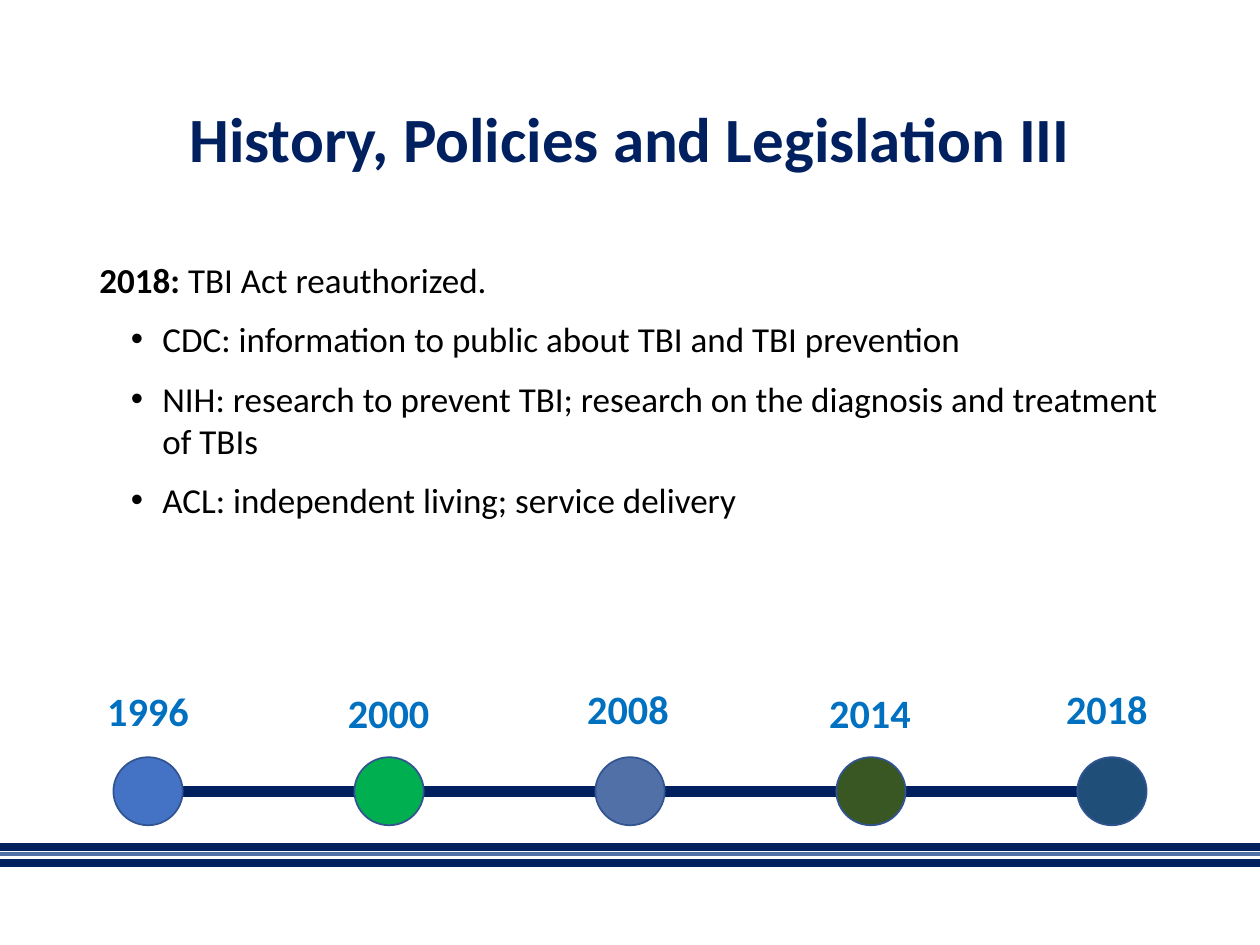
from lxml import etree
from pptx import Presentation
from pptx import util as u
from pptx.dml.color import RGBColor
from pptx.enum import shapes, text
from pptx.oxml import ns

COLORS = {
    "rule": "001F5F",
    "slate": "5070A7",
    "navy": "002060",
    "black": "000000",
    "year": "0070C0",
    "outline": "325491",
    "blue": "4472C4",
    "green": "00B050",
    "olive": "385723",
    "teal": "1F4E79",
}

TITLE = {"size": u.Pt(36), "bold": True}
BODY = {"size": u.Pt(20)}
YEAR = {"size": u.Pt(23), "bold": True}

# Footer rules: height on the page, colour, width in points
FOOTER = [(6.72, "rule", 4.5), (6.78, "slate", 2.25), (6.85, "rule", 4.5)]

BULLETS = [
    "CDC: information to public about TBI and TBI prevention",
    "NIH: research to prevent TBI; research on the diagnosis and treatment of TBIs",
    "ACL: independent living; service delivery",
]

# Year, dot colour, left and top of the label
MILESTONES = [
    ("1996", "blue", 0.55, 5.4),
    ("2000", "green", 2.46, 5.41),
    ("2008", "slate", 4.36, 5.38),
    ("2014", "olive", 6.28, 5.41),
    ("2018", "teal", 8.16, 5.38),
]
DOT_LEFT, DOT_TOP, DOT_STEP = 0.9, 6.01, 1.9125


def rgb(name):
    return RGBColor.from_string(COLORS[name])


def style(font, color, values):
    font.name = "Calibri"
    font.color.rgb = rgb(color)
    for key, value in values.items():
        setattr(font, key, value)


def add_line(page, left, right, top, color, width):
    line = page.shapes.add_connector(
        shapes.MSO_CONNECTOR.STRAIGHT,
        u.Inches(left), u.Inches(top), u.Inches(right), u.Inches(top))
    line.line.color.rgb = rgb(color)
    line.line.width = u.Pt(width)
    etree.SubElement(line._element.spPr, ns.qn("a:effectLst"))


def add_text_box(page, left, top, width, height):
    box = page.shapes.add_textbox(*map(u.Inches, (left, top, width, height)))
    box.text_frame.word_wrap = True
    return box.text_frame


def add_span(para, words, color, values):
    span = para.add_run()
    span.text = words
    style(span.font, color, values)


def add_centred(page, words, place, color, values):
    frame = add_text_box(page, *place)
    para = frame.paragraphs[0]
    para.alignment = text.PP_ALIGN.CENTER
    add_span(para, words, color, values)
    return frame


def add_bullet(frame, words):
    para = frame.add_paragraph()
    para.space_before = u.Pt(10)
    props = para._p.get_or_add_pPr()
    props.set("marL", str(u.Inches(0.5)))
    props.set("indent", str(u.Inches(-0.25)))
    etree.SubElement(props, ns.qn("a:buFont")).set("typeface", "Arial")
    etree.SubElement(props, ns.qn("a:buChar")).set("char", "•")
    add_span(para, words, "black", BODY)


def add_dot(page, left, color):
    dot = page.shapes.add_shape(
        shapes.MSO_SHAPE.OVAL,
        u.Inches(left), u.Inches(DOT_TOP), u.Inches(0.55), u.Inches(0.54))
    dot.shadow.inherit = False
    dot.fill.solid()
    dot.fill.fore_color.rgb = rgb(color)
    dot.line.color.rgb = rgb("outline")
    dot.line.width = u.Pt(1)


def main():
    deck = Presentation()
    deck.slide_width, deck.slide_height = u.Inches(10), u.Inches(7.5)
    page = deck.slides.add_slide(deck.slide_layouts[6])

    # Footer rules
    for top, color, width in FOOTER:
        add_line(page, 0, 10, top, color, width)

    # Title
    title = add_centred(page, "History, Policies and Legislation III",
                        (0.69, 0.4, 8.62, 1.45), "navy", TITLE)
    title.vertical_anchor = text.MSO_ANCHOR.MIDDLE
    title.paragraphs[0].line_spacing = 0.9

    # Body
    body = add_text_box(page, 0.69, 2, 8.62, 4.76)
    lead = body.paragraphs[0]
    add_span(lead, "2018: ", "black", {**BODY, "bold": True})
    add_span(lead, "TBI Act reauthorized.", "black", BODY)
    for words in BULLETS:
        add_bullet(body, words)

    # Timeline
    add_line(page, 1.28, 8.7, 6.28, "navy", 6)
    for index, (year, color, left, top) in enumerate(MILESTONES):
        add_centred(page, year, (left, top, 1.25, 0.49), "year", YEAR)
        add_dot(page, DOT_LEFT + index * DOT_STEP, color)

    deck.save("out.pptx")


if __name__ == "__main__":
    main()
